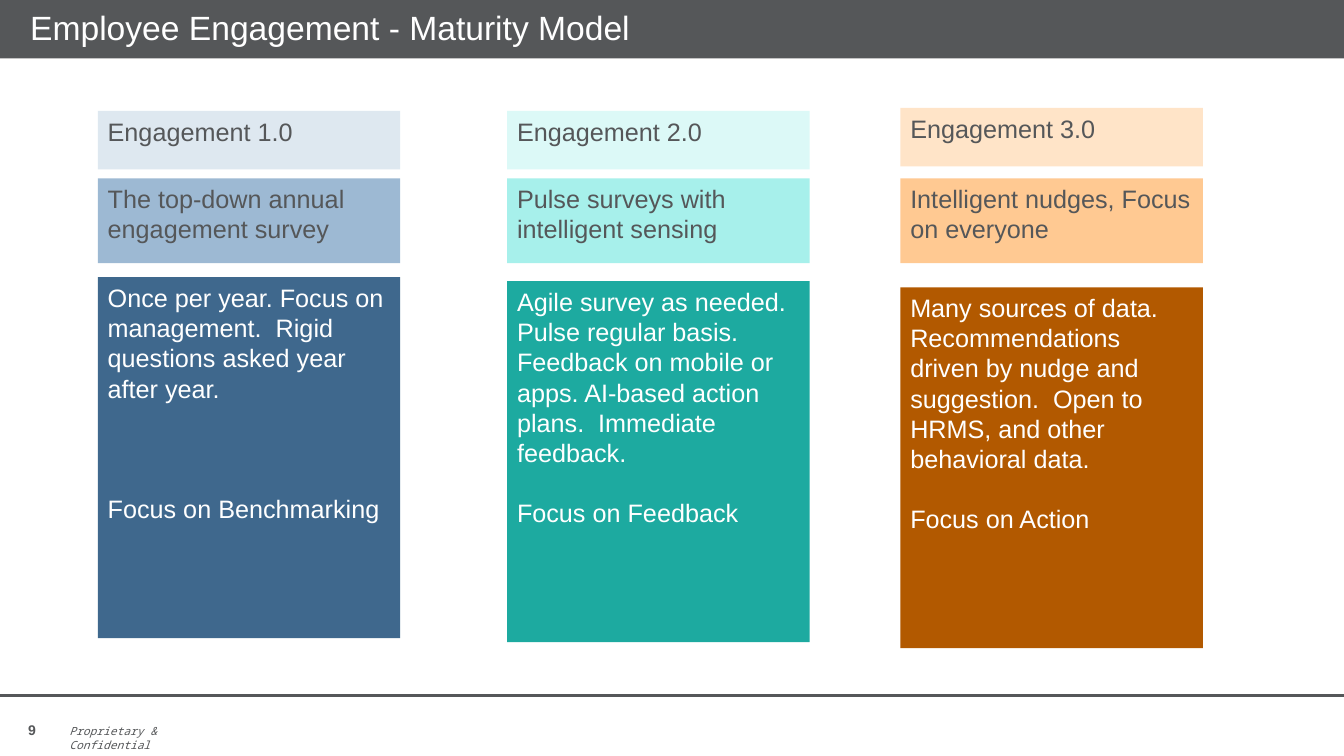
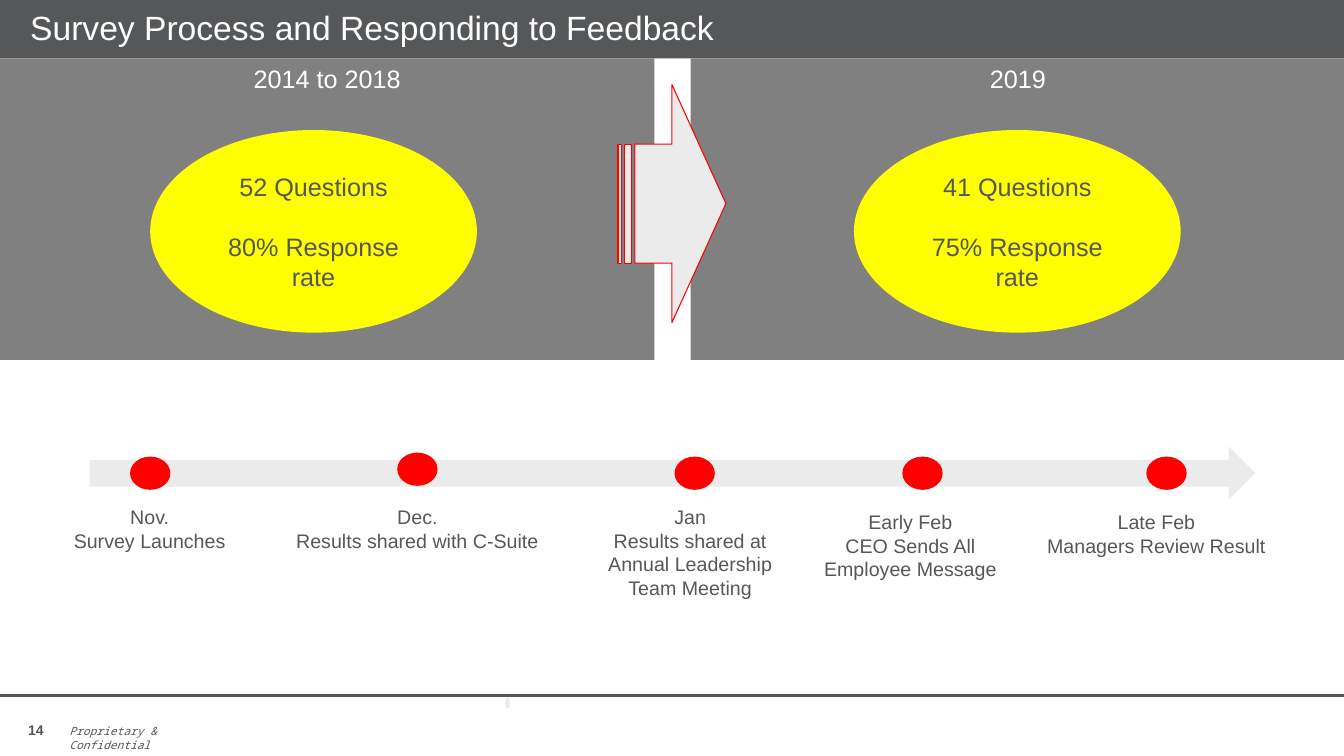
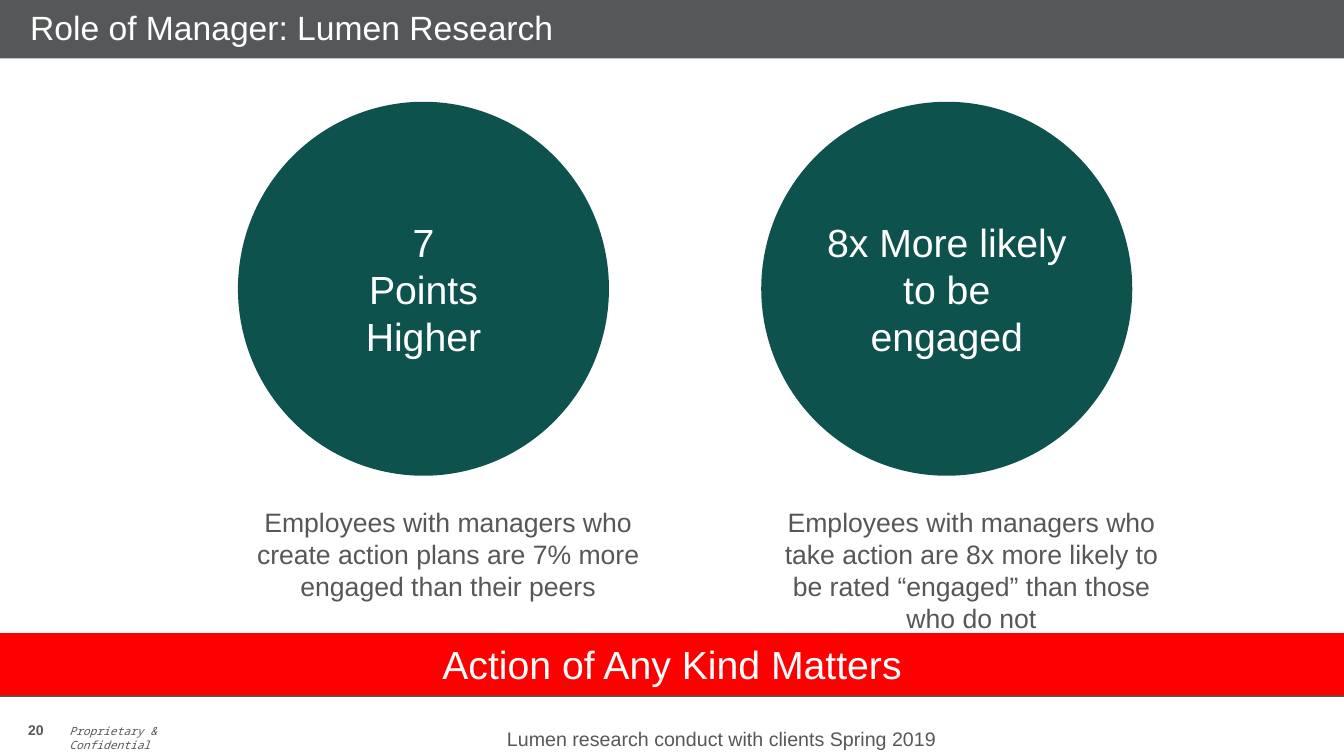
from dataclasses import dataclass

from lxml import etree
from pptx import Presentation
from pptx.dml.color import RGBColor
from pptx.enum.shapes import MSO_CONNECTOR, MSO_SHAPE
from pptx.enum.text import MSO_ANCHOR, PP_ALIGN
from pptx.oxml.ns import qn
from pptx.shapes.base import BaseShape
from pptx.slide import Slide
from pptx.util import Inches, Pt

RECTANGLE = MSO_SHAPE.RECTANGLE
OVAL = MSO_SHAPE.OVAL
RIGHT_ARROW = MSO_SHAPE.RIGHT_ARROW
STRIPED_ARROW = MSO_SHAPE.STRIPED_RIGHT_ARROW
STRAIGHT = MSO_CONNECTOR.STRAIGHT
LEFT, CENTER = PP_ALIGN.LEFT, PP_ALIGN.CENTER
TOP, MIDDLE, BOTTOM = MSO_ANCHOR.TOP, MSO_ANCHOR.MIDDLE, MSO_ANCHOR.BOTTOM

SLIDE_WIDTH, SLIDE_HEIGHT = 13.33, 7.5
TITLE_HEIGHT = 0.58
FOOTER_TOP = 6.9
BLANK_LAYOUT = 6


@dataclass(frozen=True)
class Theme:
    font: str = "Arial"
    mono_font: str = "Noto Sans Mono"
    dark: str = "555759"
    white: str = "FFFFFF"
    gray: str = "808080"
    light_gray: str = "EBEBEB"
    yellow: str = "FFFF00"
    red: str = "FF0000"
    deep_teal: str = "0E524D"
    title_size: float = 24
    headline_size: float = 28
    caption_size: float = 19
    body_size: float = 18
    label_size: float = 14
    number_size: float = 10
    notice_size: float = 8
    line_gap: float = 21.5


THEME = Theme()


@dataclass(frozen=True)
class Box:
    left: float
    top: float
    width: float
    height: float

    def lengths(self) -> tuple[int, ...]:
        return tuple(Inches(value) for value in (self.left, self.top, self.width, self.height))


@dataclass(frozen=True)
class Stage:
    left: float
    heading_top: float
    detail_top: float
    colors: tuple[str, str, str]
    heading: str
    summary: str
    detail: str
    focus: str
    focus_gap: float = THEME.line_gap


@dataclass(frozen=True)
class Period:
    left: float
    oval_left: float
    name: str
    questions: str
    response: str


@dataclass(frozen=True)
class Milestone:
    dot_left: float
    label: Box
    date: str
    event: str
    dot_top: float = 4.53
    wrap: bool = False


@dataclass(frozen=True)
class Finding:
    left: float
    headline: tuple[str, ...]
    caption: str
    caption_height: float


STAGES = (
    Stage(0.97, 1.1, 2.75, ("DEE8F0", "9DB9D3", "3F688D"), "Engagement 1.0",
          "The top-down annual engagement survey",
          "Once per year. Focus on management.  Rigid questions asked year after year.",
          "Focus on Benchmarking", 3 * THEME.line_gap),
    Stage(5.03, 1.1, 2.79, ("DCF9F7", "A7F0EB", "1DAAA0"), "Engagement 2.0",
          "Pulse surveys with intelligent sensing",
          "Agile survey as needed. Pulse regular basis.  Feedback on mobile or apps. "
          "AI-based action plans.  Immediate feedback.",
          "Focus on Feedback"),
    Stage(8.93, 1.07, 2.85, ("FFE4C8", "FFC992", "B25900"), "Engagement 3.0",
          "Intelligent nudges, Focus on everyone",
          "Many sources of data. Recommendations driven by nudge and suggestion.  "
          "Open to HRMS, and other behavioral data.",
          "Focus on Action"),
)

PERIODS = (
    Period(0, 1.49, "2014 to 2018", "52 Questions", "80% Response rate"),
    Period(6.85, 8.47, "2019", "41 Questions", "75% Response rate"),
)

MILESTONES = (
    Milestone(1.29, Box(0.63, 4.96, 1.71, 0.57), "Nov.", "Survey Launches"),
    Milestone(3.94, Box(2.83, 4.96, 2.62, 0.57), "Dec.", "Results shared with C-Suite",
              dot_top=4.49),
    Milestone(6.69, Box(5.84, 4.96, 2.01, 1.04), "Jan",
              "Results shared at Annual Leadership Team Meeting", wrap=True),
    Milestone(8.95, Box(7.91, 5.01, 2.24, 0.81), "Early Feb",
              "CEO Sends All Employee Message", wrap=True),
    Milestone(11.37, Box(10.2, 5.01, 2.54, 0.57), "Late Feb", "Managers Review Result"),
)

FINDINGS = (
    Finding(2.36, ("7", "Points", "Higher"),
            "Employees with managers who create action plans are 7% more engaged "
            "than their peers", 1.06),
    Finding(7.55, ("8x More likely to be engaged",),
            "Employees with managers who take action are 8x more likely to be rated "
            "“engaged” than those who do not", 1.38),
)


def write_text(shape: BaseShape, *lines: str, size: float = THEME.body_size,
               color: str = THEME.dark, font: str = THEME.font, bold: bool = False,
               italic: bool = False, align: PP_ALIGN = LEFT, anchor: MSO_ANCHOR = TOP,
               gap: float = 0, line_spacing: float = 1.0, inset: float = 0.1,
               wrap: bool = True) -> None:
    """Write one paragraph per line, with gap points between paragraphs."""
    frame = shape.text_frame
    frame.word_wrap = wrap
    frame.vertical_anchor = anchor
    frame.margin_left = Inches(inset)
    for index, line in enumerate(lines):
        paragraph = frame.add_paragraph() if index else frame.paragraphs[0]
        paragraph.alignment = align
        paragraph.line_spacing = line_spacing
        paragraph.space_before = Pt(gap if index else 0)
        run = paragraph.add_run()
        run.text = line
        run.font.name = font
        run.font.size = Pt(size)
        run.font.bold = bold
        run.font.italic = italic
        run.font.color.rgb = RGBColor.from_string(color)


def add_filled(slide: Slide, kind: MSO_SHAPE, box: Box, fill: str,
               outline: str | None = None) -> BaseShape:
    shape = slide.shapes.add_shape(kind, *box.lengths())
    shape.shadow.inherit = False
    shape.fill.solid()
    shape.fill.fore_color.rgb = RGBColor.from_string(fill)
    if outline:
        shape.line.color.rgb = RGBColor.from_string(outline)
        shape.line.width = Pt(0.75)
    else:
        shape.line.fill.background()
    return shape


def add_text_box(slide: Slide, box: Box) -> BaseShape:
    return slide.shapes.add_textbox(*box.lengths())


def add_base_slide(presentation: Presentation, title: str, number: int) -> Slide:
    """Add a slide with the shared title band, footer rule and footer texts."""
    slide = presentation.slides.add_slide(presentation.slide_layouts[BLANK_LAYOUT])
    write_text(add_text_box(slide, Box(0.18, 6.98, 1.91, 0.39)), str(number),
               size=THEME.number_size, bold=True, anchor=BOTTOM)
    write_text(add_text_box(slide, Box(0.59, 7.14, 1.49, 0.24)), "Proprietary & Confidential",
               size=THEME.notice_size, font=THEME.mono_font, italic=True)
    rule = slide.shapes.add_connector(STRAIGHT, 0, Inches(FOOTER_TOP),
                                      Inches(SLIDE_WIDTH), Inches(FOOTER_TOP))
    rule.line.color.rgb = RGBColor.from_string(THEME.dark)
    rule.line.width = Pt(2.25)
    etree.SubElement(rule._element.spPr, qn("a:effectLst"))
    band = add_filled(slide, RECTANGLE, Box(0, 0, SLIDE_WIDTH, TITLE_HEIGHT), THEME.dark)
    write_text(band, title, size=THEME.title_size, color=THEME.white, anchor=MIDDLE,
               line_spacing=0.95, inset=0.3)
    return slide


def build_maturity_model(presentation: Presentation) -> None:
    slide = add_base_slide(presentation, "Employee Engagement - Maturity Model", 9)
    for stage in STAGES:
        heading_color, summary_color, detail_color = stage.colors
        heading = add_filled(slide, RECTANGLE, Box(stage.left, stage.heading_top, 3, 0.58),
                             heading_color)
        write_text(heading, stage.heading)
        summary = add_filled(slide, RECTANGLE, Box(stage.left, 1.77, 3, 0.84), summary_color)
        write_text(summary, stage.summary)
        detail = add_filled(slide, RECTANGLE, Box(stage.left, stage.detail_top, 3, 3.58),
                            detail_color)
        write_text(detail, stage.detail, stage.focus, color=THEME.white, gap=stage.focus_gap)


def build_survey_process(presentation: Presentation) -> None:
    slide = add_base_slide(presentation, "Survey Process and Responding to Feedback", 14)
    for period in PERIODS:
        panel = add_filled(slide, RECTANGLE, Box(period.left, TITLE_HEIGHT, 6.49, 2.99),
                           THEME.gray)
        write_text(panel, period.name, color=THEME.white, align=CENTER)
        oval = add_filled(slide, OVAL, Box(period.oval_left, 1.29, 3.24, 2.01), THEME.yellow)
        write_text(oval, period.questions, period.response, align=CENTER, anchor=MIDDLE,
                   gap=THEME.line_gap)
    add_filled(slide, STRIPED_ARROW, Box(6.13, 0.84, 1.07, 2.36), THEME.light_gray, THEME.red)

    add_filled(slide, RIGHT_ARROW, Box(0.89, 4.43, 11.56, 0.53), THEME.light_gray)
    for milestone in MILESTONES:
        add_filled(slide, OVAL, Box(milestone.dot_left, milestone.dot_top, 0.4, 0.33), THEME.red)
        write_text(add_text_box(slide, milestone.label), milestone.date, milestone.event,
                   size=THEME.label_size, align=CENTER, wrap=milestone.wrap)
    add_filled(slide, OVAL, Box(5.01, 6.92, 0.05, 0.11), THEME.light_gray)


def build_manager_role(presentation: Presentation) -> None:
    slide = add_base_slide(presentation, "Role of Manager: Lumen Research", 20)
    for finding in FINDINGS:
        circle = add_filled(slide, OVAL, Box(finding.left, 1.01, 3.68, 3.71), THEME.deep_teal)
        write_text(circle, *finding.headline, size=THEME.headline_size, color=THEME.white,
                   align=CENTER, anchor=MIDDLE)
        caption = add_text_box(slide, Box(finding.left, 4.97, 4.17, finding.caption_height))
        write_text(caption, finding.caption, size=THEME.caption_size, align=CENTER)
    banner = add_filled(slide, RECTANGLE, Box(0, 6.28, SLIDE_WIDTH, 0.62), THEME.red)
    write_text(banner, "Action of Any Kind Matters", size=THEME.headline_size,
               color=THEME.white, align=CENTER, anchor=MIDDLE)
    write_text(add_text_box(slide, Box(4.93, 7.16, 5, 0.34)),
               "Lumen research conduct with clients Spring 2019", size=THEME.label_size)


def main() -> None:
    presentation = Presentation()
    presentation.slide_width = Inches(SLIDE_WIDTH)
    presentation.slide_height = Inches(SLIDE_HEIGHT)
    build_maturity_model(presentation)
    build_survey_process(presentation)
    build_manager_role(presentation)
    presentation.save("out.pptx")


if __name__ == "__main__":
    main()
